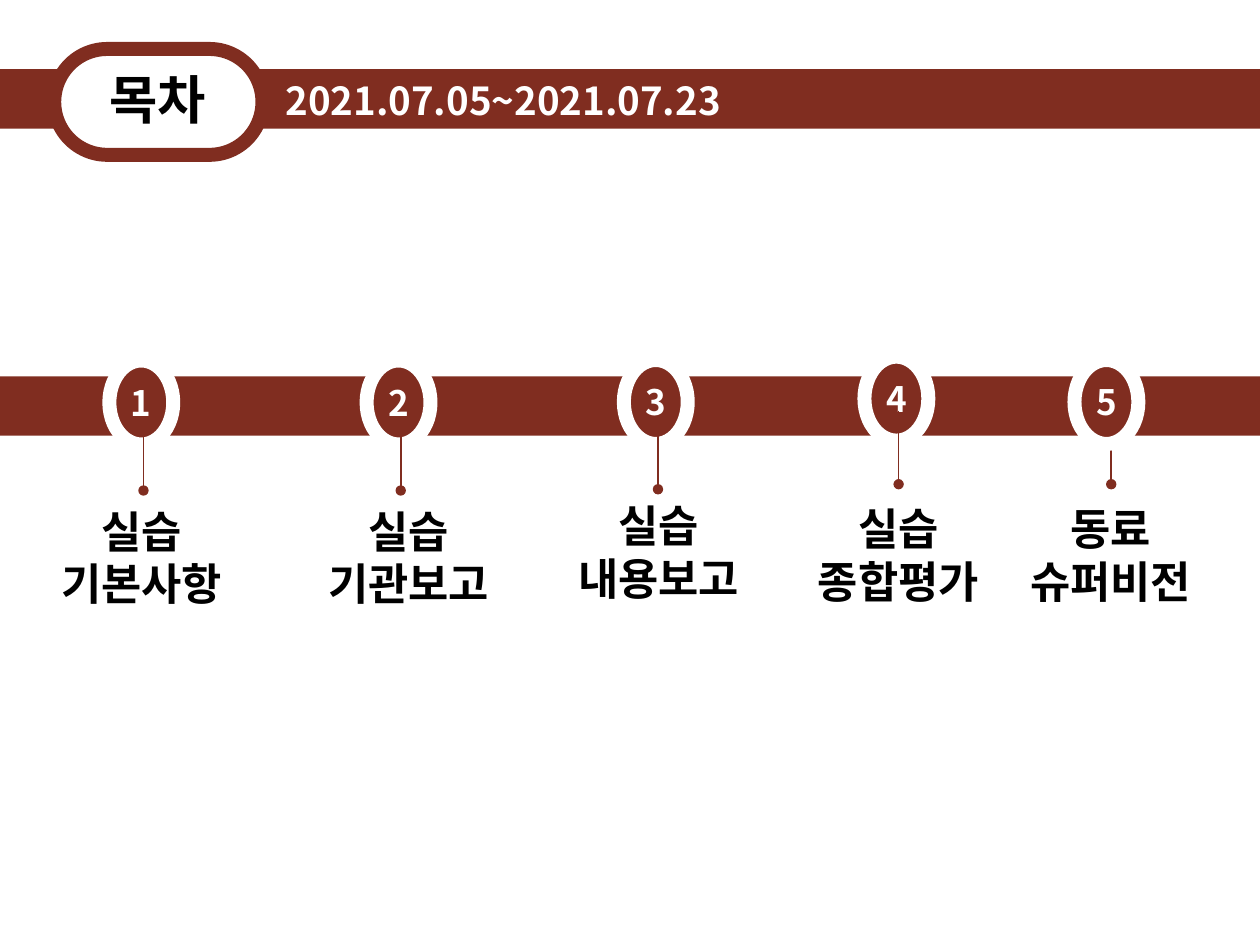
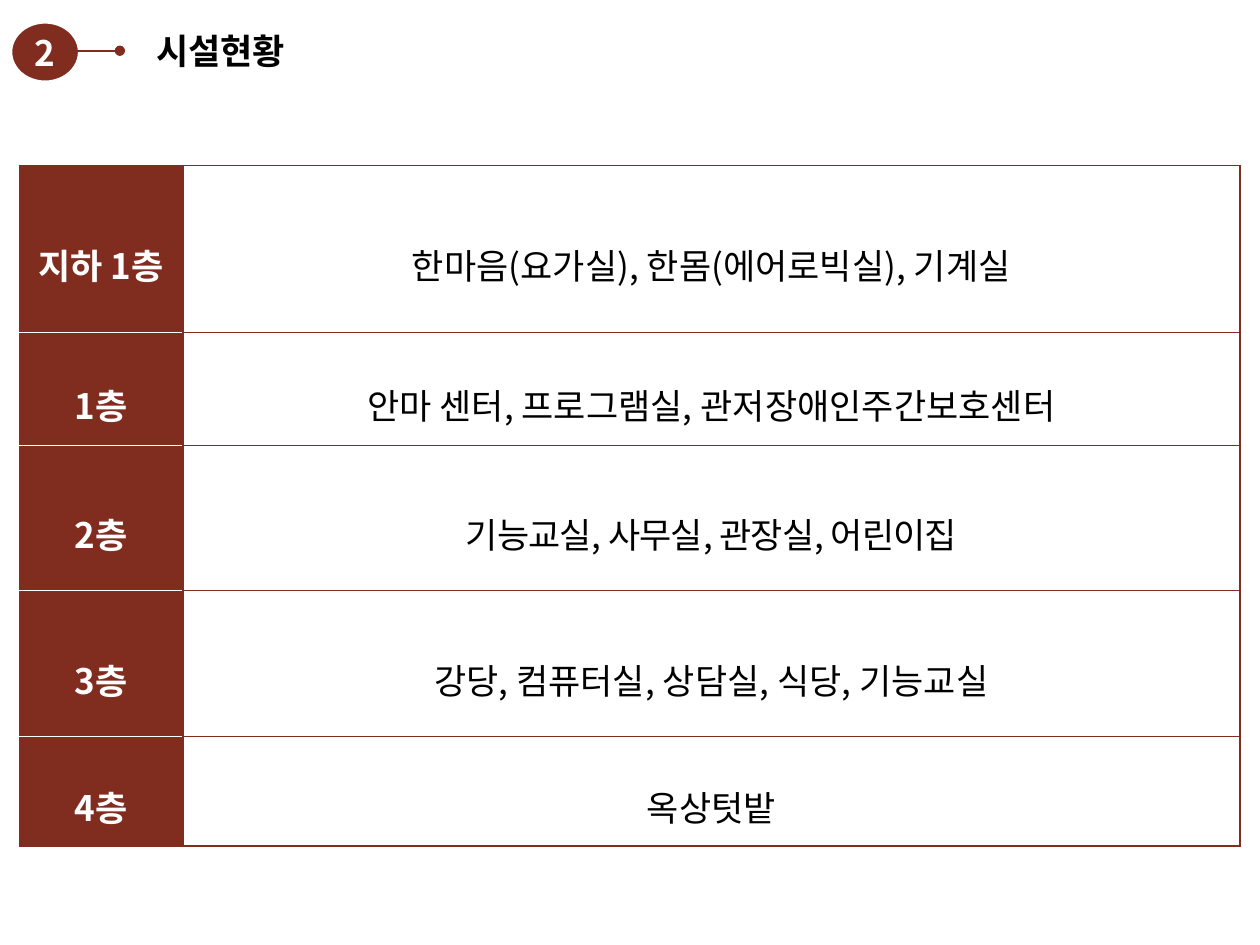
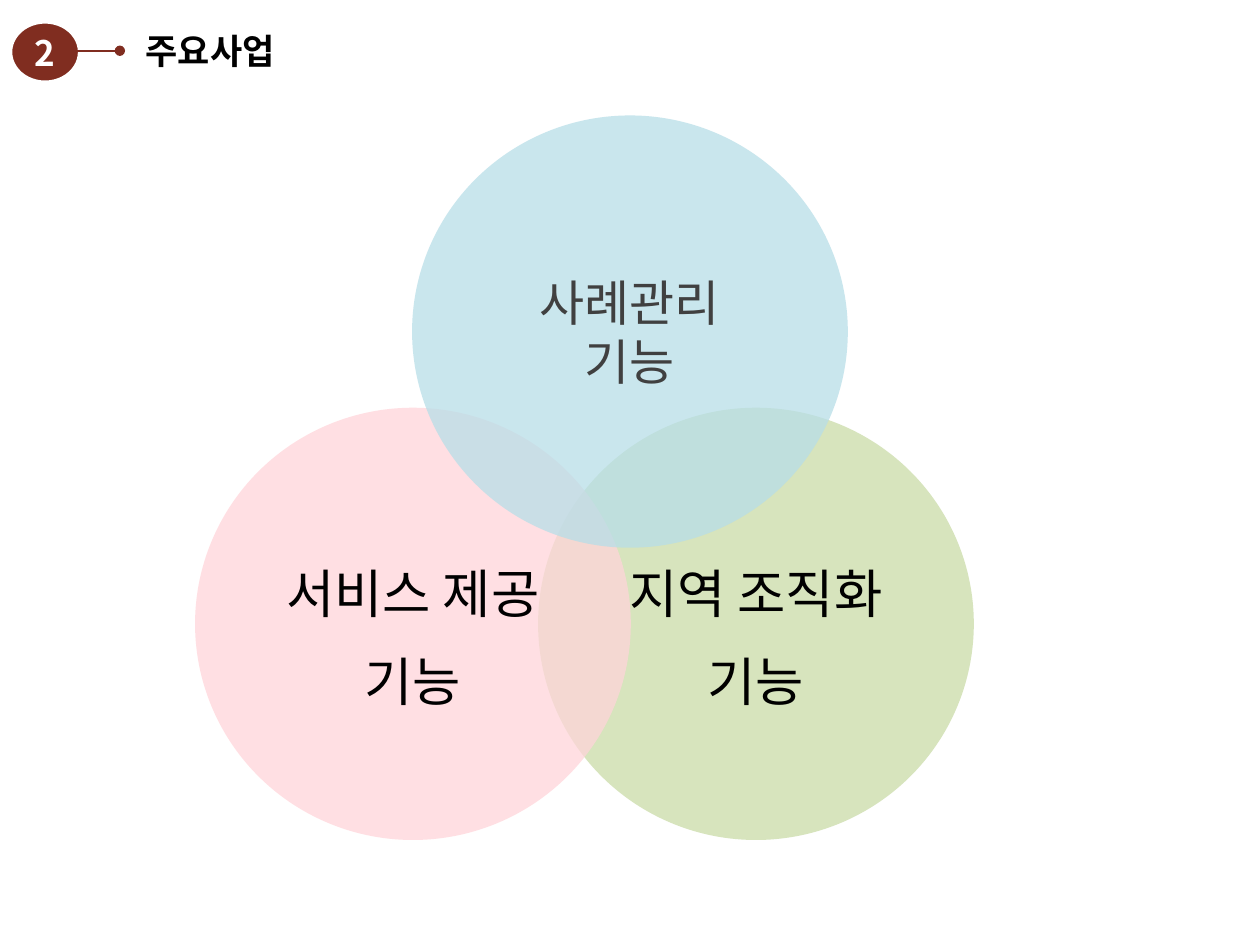
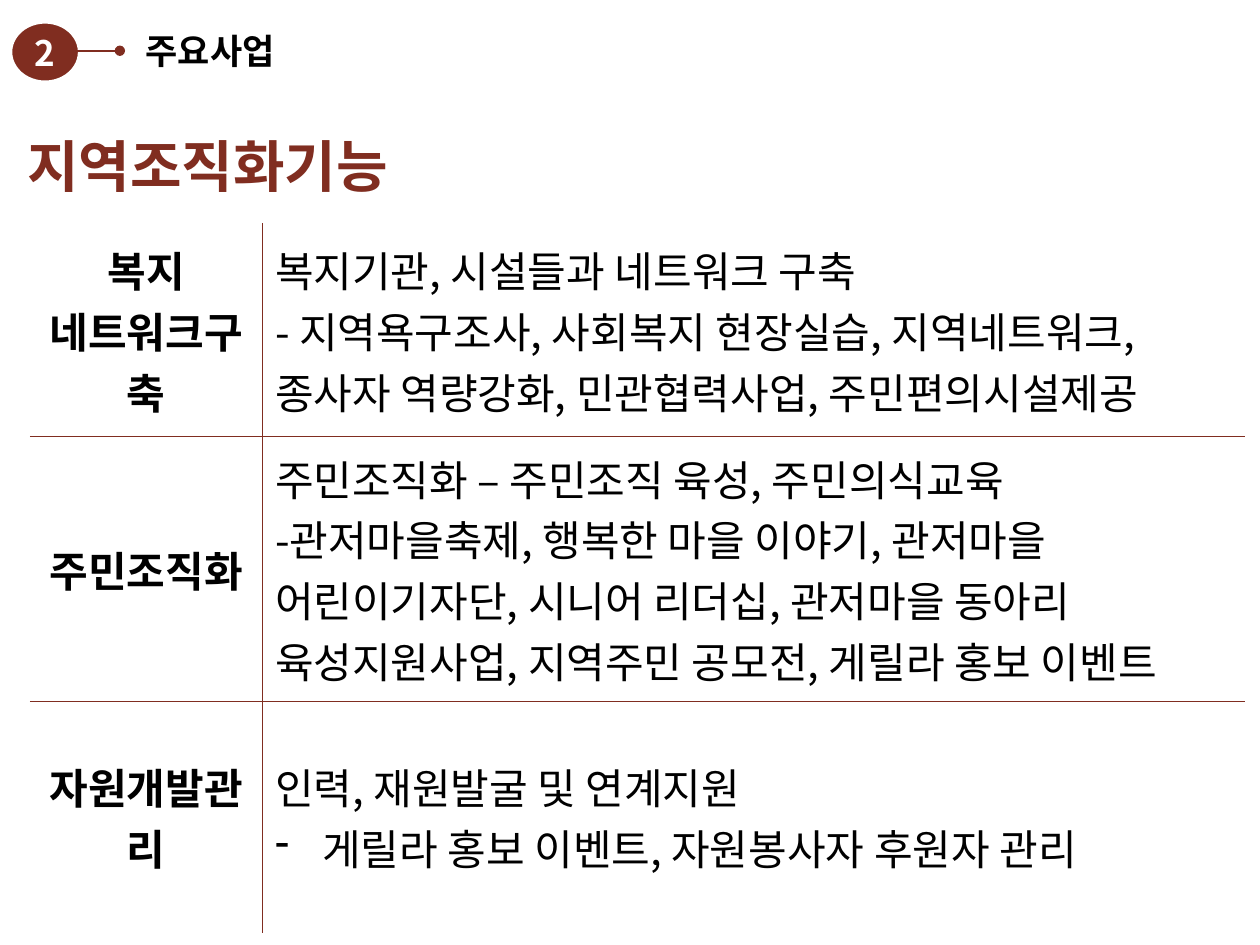
from dataclasses import dataclass

from lxml import etree
from pptx import Presentation
from pptx.dml.color import RGBColor
from pptx.enum.shapes import MSO_CONNECTOR, MSO_SHAPE
from pptx.enum.text import MSO_ANCHOR, MSO_AUTO_SIZE, PP_ALIGN
from pptx.oxml.ns import qn
from pptx.util import Pt

OVAL, RECT, PILL = MSO_SHAPE.OVAL, MSO_SHAPE.RECTANGLE, MSO_SHAPE.ROUNDED_RECTANGLE
LEFT, CENTER = PP_ALIGN.LEFT, PP_ALIGN.CENTER
TOP, MIDDLE = MSO_ANCHOR.TOP, MSO_ANCHOR.MIDDLE
GROW = MSO_AUTO_SIZE.SHAPE_TO_FIT_TEXT
STRAIGHT = MSO_CONNECTOR.STRAIGHT
TITLE_ONLY = 5
PLAIN_TABLE = "{2D5ABB26-0587-4C30-8999-92F81FD0307C}"


@dataclass(frozen=True)
class Theme:
    font: str = "Noto Sans CJK KR"
    brick: str = "802D20"
    white: str = "FFFFFF"
    black: str = "000000"
    grey: str = "404040"
    green: str = "D7E4BD"
    pink: str = "FFD5DA"
    blue: str = "B7DEE8"
    heading: int = 32
    title: int = 30
    circle: int = 28
    label: int = 25
    body: int = 24
    date: int = 22
    small: int = 20
    ring: int = 8
    rule: int = 1


THEME = Theme()
SLIDE_WIDTH, SLIDE_HEIGHT = 720, 540
BAND_HEIGHT = 34

# badge left, badge top, stem left, stem top, label box (left, top, width), label
MILESTONES = [
    (62.5, 206, 82, 238.3, (14.5, 284.5, 133), ["실습", "기본사항"]),
    (209.5, 206, 229, 238.3, (124.5, 284.5, 218), ["실습", "기관보고"]),
    (356.5, 205.7, 376, 237.6, (297.5, 281.5, 157.5), ["실습", "내용보고"]),
    (494, 203.8, 513.5, 234.7, (436.5, 283, 153.5), ["실습", "종합평가"]),
    (614, 205.7, 635, 234.7, (558, 283, 153.5), ["동료", "슈퍼비전"]),
]

# floor, rooms, letter spacing in hundredths of a point, row height
FLOORS = [
    ("지하 1층", "한마음(요가실), 한몸(에어로빅실), 기계실", 0, 95.5),
    ("1층", "안마 센터, 프로그램실, 관저장애인주간보호센터", 0, 64.5),
    ("2층", "기능교실, 사무실, 관장실, 어린이집", -60, 83),
    ("3층", "강당, 컴퓨터실, 상담실, 식당, 기능교실", 0, 83.5),
    ("4층", "옥상텃밭", 0, 62.5),
]

PROGRAMS = [
    (["복지", "네트워크구축"],
     ["복지기관, 시설들과 네트워크 구축",
      "- 지역욕구조사, 사회복지 현장실습, 지역네트워크, 종사자 역량강화, "
      "민관협력사업, 주민편의시설제공"], 122),
    (["주민조직화"],
     ["주민조직화 – 주민조직 육성, 주민의식교육",
      "-관저마을축제, 행복한 마을 이야기, 관저마을 어린이기자단, 시니어 리더십, "
      "관저마을 동아리 육성지원사업, 지역주민 공모전, 게릴라 홍보 이벤트"], 151.5),
    (["자원개발관리"],
     ["인력, 재원발굴 및 연계지원",
      "게릴라 홍보 이벤트, 자원봉사자 후원자 관리"], 132),
]


def rgb(color):
    return RGBColor.from_string(color)


def points(*lengths):
    return [Pt(length) for length in lengths]


def write(frame, lines, size, color=THEME.black, bold=False, align=LEFT,
          anchor=TOP, spacing=None, tracking=0):
    frame.text = "\n".join(lines)
    frame.word_wrap = True
    frame.vertical_anchor = anchor
    for paragraph in frame.paragraphs:
        paragraph.alignment = align
        if spacing:
            paragraph.line_spacing = spacing
        font = paragraph.font
        font.size, font.bold, font.name = Pt(size), bold, THEME.font
        font.color.rgb = rgb(color)
        defaults = paragraph._p.pPr.find(qn("a:defRPr"))
        etree.SubElement(defaults, qn("a:ea"), typeface=THEME.font)
        if tracking:
            defaults.set("spc", str(tracking))


def add_figure(slide, preset, box, fill, ring=None, alpha=None):
    figure = slide.shapes.add_shape(preset, *points(*box))
    figure.shadow.inherit = False
    figure.fill.solid()
    figure.fill.fore_color.rgb = rgb(fill)
    if alpha:
        color = figure.element.spPr.find(qn("a:solidFill"))[0]
        etree.SubElement(color, qn("a:alpha"), val=str(alpha * 1000))
    if ring:
        figure.line.color.rgb = rgb(ring)
        figure.line.width = Pt(THEME.ring)
    else:
        figure.line.fill.background()
    return figure


def add_badge(slide, box, number):
    badge = add_figure(slide, OVAL, box, THEME.brick, ring=THEME.white)
    badge.text_frame.margin_left = badge.text_frame.margin_right = 0
    write(badge.text_frame, [str(number)], THEME.small, THEME.white, True, CENTER, MIDDLE)


def add_stem(slide, left, top, width=0, height=0):
    """Thin line that ends in a dot."""
    stem = slide.shapes.add_connector(
        STRAIGHT, *points(left, top, left + width, top + height))
    stem.line.color.rgb = rgb(THEME.brick)
    stem.line.width = Pt(THEME.rule)
    properties = stem.element.spPr
    etree.SubElement(properties.find(qn("a:ln")), qn("a:tailEnd"), type="oval")
    etree.SubElement(properties, qn("a:effectLst"))


def add_text(slide, box, lines, size, **style):
    text_box = slide.shapes.add_textbox(*points(*box))
    write(text_box.text_frame, lines, size, **style)
    text_box.text_frame.auto_size = GROW


def place_title(slide, box, title, size, **style):
    """Move the title placeholder to the box and to the front."""
    holder = slide.shapes.title
    holder.left, holder.top, holder.width, holder.height = points(*box)
    write(holder.text_frame, [title], size, bold=True, **style)
    holder.text_frame.auto_size = GROW
    holder.element.getparent().append(holder.element)


def add_band(slide, top):
    add_figure(slide, RECT, (0, top, SLIDE_WIDTH, BAND_HEIGHT), THEME.brick)


def contents_header(slide, left, top, title, dates):
    add_band(slide, top + 11.5)
    pill = add_figure(slide, PILL, (left, top, 119, 60.5), THEME.white, ring=THEME.brick)
    pill.adjustments[0] = 0.5
    place_title(slide, (left + 20, top + 6.5, 78, 43), title, THEME.title,
                align=CENTER, anchor=MIDDLE)
    add_text(slide, (left + 125, top + 12.5, 340, BAND_HEIGHT), [dates],
             THEME.date, color=THEME.white, bold=True)


def milestones(slide, band_top):
    add_band(slide, band_top)
    for number, (left, top, stem_left, stem_top, label_box, label) in enumerate(MILESTONES, 1):
        badge_box = (left, top, 36.5, 48)
        last = number == len(MILESTONES)
        if not last:
            add_badge(slide, badge_box, number)
        add_stem(slide, stem_left, stem_top, height=42)
        if last:  # the last stem starts behind its badge
            add_badge(slide, badge_box, number)
        add_text(slide, (*label_box, 67.5), label, THEME.label,
                 bold=True, align=CENTER, anchor=MIDDLE)


def section_header(slide, title, title_left, title_width, left=3, top=9.5):
    add_badge(slide, (left, top, 45.5, 40.5), 2)
    add_stem(slide, left + 39.5, top + 19.5, width=26)
    place_title(slide, (title_left, top + 3.5, title_width, 31.5), title,
                THEME.small, align=LEFT, anchor=TOP)


def add_plain_table(slide, left, top, widths, heights):
    frame = slide.shapes.add_table(
        len(heights), len(widths),
        *points(left, top, sum(widths), sum(heights)))
    table = frame.table
    table.first_row = table.horz_banding = False
    frame.element.find(".//" + qn("a:tableStyleId")).text = PLAIN_TABLE
    for column, width in zip(table.columns, widths):
        column.width = Pt(width)
    for row, height in zip(table.rows, heights):
        row.height = Pt(height)
    return table


def finish_cell(cell, fill=None, **borders):
    """Draw the borders L, R, T, B in the colours given, then the fill."""
    properties = cell._tc.get_or_add_tcPr()
    for side in "LRTB":
        color = borders.get(side)
        line = etree.SubElement(properties, qn(f"a:ln{side}"), w=str(Pt(THEME.rule)))
        if color:
            solid = etree.SubElement(line, qn("a:solidFill"))
            etree.SubElement(solid, qn("a:srgbClr"), val=color)
        else:
            etree.SubElement(line, qn("a:noFill"))
    if fill:
        cell.fill.solid()
        cell.fill.fore_color.rgb = rgb(fill)
    else:
        cell.fill.background()


def floor_table(slide, left, top):
    table = add_plain_table(slide, left, top, (93.5, 604), [floor[-1] for floor in FLOORS])
    brick, white = THEME.brick, THEME.white
    for row, (floor, rooms, tracking, _) in enumerate(FLOORS):
        name_cell, rooms_cell = table.cell(row, 0), table.cell(row, 1)
        for cell in (name_cell, rooms_cell):
            cell.margin_left = cell.margin_right = Pt(5)
            cell.margin_top = cell.margin_bottom = Pt(1.5)
        centred = {"align": CENTER, "spacing": 1.6}
        write(name_cell.text_frame, [floor], THEME.small, white, True, **centred)
        write(rooms_cell.text_frame, [rooms], THEME.small, tracking=tracking, **centred)
        name_cell.vertical_anchor = rooms_cell.vertical_anchor = MIDDLE
        finish_cell(name_cell, brick, L=brick, R=brick,
                    T=white if row else brick,
                    B=white if row < len(FLOORS) - 1 else brick)
        finish_cell(rooms_cell, L=brick, R=brick, T=brick, B=brick)


def function_circles(slide, left, top):
    circles = [
        (196, 167, THEME.green, None, ["지역 조직화", "기능"], THEME.title, THEME.black, 1.4),
        (0, 167, THEME.pink, 75, ["서비스 제공", "기능"], THEME.title, THEME.black, 1.4),
        (124, 0, THEME.blue, 75, ["사례관리", "기능"], THEME.circle, THEME.grey, None),
    ]
    for dx, dy, fill, alpha, label, size, color, spacing in circles:
        circle = add_figure(slide, OVAL, (left + dx, top + dy, 249, 247), fill, alpha=alpha)
        write(circle.text_frame, label, size, color, align=CENTER,
              anchor=MIDDLE, spacing=spacing)


def set_dash_bullet(paragraph, indent):
    properties = paragraph._p.get_or_add_pPr()
    properties.set("marL", str(Pt(indent)))
    properties.set("indent", str(-Pt(indent)))
    bullet = etree.Element(qn("a:buChar"), char="-")
    properties.find(qn("a:defRPr")).addprevious(bullet)


def program_table(slide, left, top):
    table = add_plain_table(slide, left, top, (133, 561.5),
                            [program[-1] for program in PROGRAMS])
    brick = THEME.brick
    for row, (name, details, _) in enumerate(PROGRAMS):
        name_cell, details_cell = table.cell(row, 0), table.cell(row, 1)
        write(name_cell.text_frame, name, THEME.body, bold=True, align=CENTER)
        write(details_cell.text_frame, details, THEME.body)
        name_cell.vertical_anchor = details_cell.vertical_anchor = MIDDLE
        rules = {"T": brick if row else None,
                 "B": brick if row < len(PROGRAMS) - 1 else None}
        finish_cell(name_cell, R=brick, **rules)
        finish_cell(details_cell, L=brick, **rules)
    set_dash_bullet(details_cell.text_frame.paragraphs[-1], 27)


def main():
    deck = Presentation()
    deck.slide_width, deck.slide_height = points(SLIDE_WIDTH, SLIDE_HEIGHT)
    contents, facilities, functions, programs = (
        deck.slides.add_slide(deck.slide_layouts[TITLE_ONLY]) for _ in range(4))

    milestones(contents, 215)
    contents_header(contents, 31, 28, "목차", "2021.07.05~2021.07.23")

    section_header(facilities, "시설현황", 82, 199)
    floor_table(facilities, 11, 94.5)

    section_header(functions, "주요사업", 76, 408)
    function_circles(functions, 111.5, 66)

    section_header(programs, "주요사업", 76, 385)
    add_text(programs, (8.5, 71.5, 249, 46), ["지역조직화기능"],
             THEME.heading, color=THEME.brick, bold=True)
    program_table(programs, 17, 127.5)

    deck.save("out.pptx")


if __name__ == "__main__":
    main()
